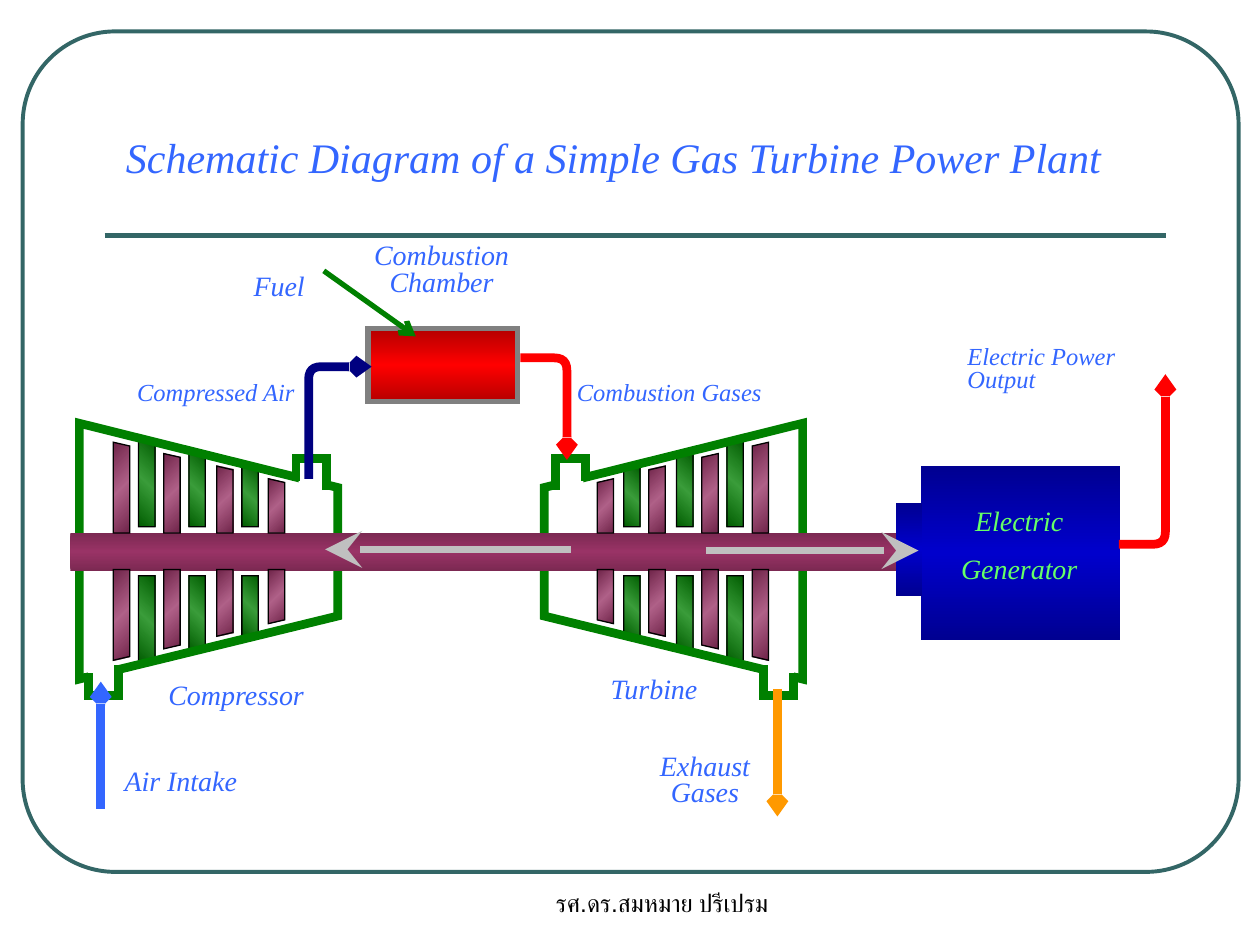
from lxml import etree
from pptx import Presentation, util as u
from pptx.dml.color import RGBColor
from pptx.enum import shapes, text
from pptx.oxml import parse_xml
from pptx.oxml.ns import nsdecls, qn

BLUE, GREEN, RED, PURPLE = "3366FF", "008000", "FF0000", "993366"
TEAL, SILVER, NAVY = "336666", "C0C0C0", "0000CC"

# All positions are in inches.
TITLE = ("Schematic Diagram of a Simple Gas Turbine Power Plant", (0.48, 1.07, 8.78, 0.42))
FOOTER = ("รศ.ดร.สมหมาย ปรีเปรม", (3.67, 7, 3.17, 0.5))

# Turbine parts; the compressor is their mirror image.
MIRROR_X = 7.0      # x + mirrored x
MIRROR_Y = 8.75     # upper y + lower y
BLADE_WIDTH = 0.13
ROTOR_BLADES = [(4.74, 3.8), (5.15, 3.7), (5.57, 3.6), (5.97, 3.51)]    # left, tip
STATOR_BLADES = [(4.95, 3.7), (5.37, 3.59), (5.77, 3.49)]
CASING = [(6.37, 3.36), (4.32, 3.87), (4.32, 4.89), (6.37, 5.39)]
PORTS = [   # opening, then outline
    ((6.08, 5.25, 0.22, 0.28), [(6.06, 5.28), (6.06, 5.52), (6.3, 5.52), (6.3, 5.34)]),
    ((4.41, 3.64, 0.22, 0.28), [(4.41, 3.89), (4.41, 3.64), (4.65, 3.64), (4.65, 3.82)]),
]
SHAFTS = [(3.11, 4.23, 4.1, 0.3), (0.56, 4.23, 2.56, 0.3)]
CHAMBER = (2.92, 2.61, 1.19, 0.58)
GENERATOR = [(7.31, 3.7, 1.58, 1.38), (7.11, 3.99, 0.21, 0.74)]

PIPES = [   # start, corner, end, colour
    ((2.45, 3.8), (2.45, 2.91), (2.95, 2.91), "000080"),
    ((4.13, 2.84), (4.5, 2.84), (4.5, 3.65), RED),
    ((8.88, 4.32), (9.25, 4.32), (9.25, 2.97), RED),
]
ARROWS = [  # from, to, colour, width, head, head size
    ((2.57, 2.15), (3.3, 2.67), GREEN, 3, "arrow", "med"),
    ((0.8, 6.42), (0.8, 5.41), BLUE, 5, "arrow", "sm"),
    ((6.17, 5.47), (6.17, 6.48), "FF9900", 5, "arrow", "sm"),
    ((4.53, 4.36), (2.58, 4.36), SILVER, 4.25, "stealth", "lg"),
    ((5.6, 4.37), (7.29, 4.37), SILVER, 4.25, "stealth", "lg"),
]

SPACED = {"space_before": u.Pt(8), "alignment": text.PP_ALIGN.CENTER}
TIGHT = {"line_spacing": 0.8, "alignment": text.PP_ALIGN.CENTER}
FLOW = {"line_spacing": 0.8, "alignment": text.PP_ALIGN.LEFT}
LABELS = [  # lines, box, size, colour, paragraph format
    (["Turbine"], (4.65, 5.28, 1.08, 0.37), 16, BLUE, SPACED),
    (["Compressor"], (1.16, 5.33, 1.43, 0.37), 16, BLUE, SPACED),
    (["Combustion", "Chamber"], (2.79, 1.89, 1.43, 0.53), 16, BLUE, TIGHT),
    (["Fuel"], (1.82, 2.08, 0.79, 0.37), 16, BLUE, SPACED),
    (["Air Intake"], (0.72, 6.06, 1.43, 0.31), 16, BLUE, TIGHT),
    (["Exhaust Gases"], (4.88, 5.94, 1.43, 0.53), 16, BLUE, TIGHT),
    (["Compressed Air"], (0.99, 2.99, 1.46, 0.29), 14, BLUE, FLOW),
    (["Combustion Gases"], (4.48, 2.99, 1.67, 0.29), 14, BLUE, FLOW),
    (["Electric", "Generator"], (7.47, 3.95, 1.24, 0.77), 16, "66FF66", SPACED),
    (["Electric Power Output"], (7.58, 2.7, 1.96, 0.29), 14, BLUE, FLOW),
]


def emu(*inches):
    return [u.Cm(v * 2.54) for v in inches]


def paint(fmt, colour):
    """Give a fill or a font colour a hex colour."""
    if hasattr(fmt, "solid"):
        fmt.solid()
        fmt = fmt.fore_color
    fmt.rgb = RGBColor.from_string(colour)


def gradient(sp, colour, shade, angle, alpha=100):
    """Fill from a dark edge through the plain colour to a dark edge."""
    edge = f'<a:srgbClr val="{colour}"><a:shade val="{shade * 1000}"/></a:srgbClr>'
    middle = f'<a:srgbClr val="{colour}"><a:alpha val="{alpha * 1000}"/></a:srgbClr>'
    stops = "".join(f'<a:gs pos="{pos}">{c}</a:gs>'
                    for pos, c in ((0, edge), (50000, middle), (100000, edge)))
    sp.fill.background()
    old = sp._element.spPr.find(qn("a:noFill"))
    old.getparent().replace(old, parse_xml(
        f'<a:gradFill {nsdecls("a")} rotWithShape="1"><a:gsLst>{stops}</a:gsLst>'
        f'<a:lin ang="{angle * 60000}" scaled="1"/></a:gradFill>'))


def outline(sp, colour=None, width=1, head=None, size="med"):
    if colour is None:
        sp.line.fill.background()
        return
    paint(sp.line.fill, colour)
    sp.line.width = u.Pt(width)
    ln = sp.line._get_or_add_ln()
    etree.SubElement(ln, qn("a:miter"), lim="800000")
    if head:
        etree.SubElement(ln, qn("a:tailEnd"), type=head, w=size, len=size)


def add_box(box, colour=None, kind=shapes.MSO_SHAPE.RECTANGLE):
    sp = s.shapes.add_shape(kind, *emu(*box))
    sp.shadow.inherit = False
    sp.fill.background()
    if colour:
        paint(sp.fill, colour)
    outline(sp)
    return sp


def add_path(points, close=False):
    pts = [emu(*pt) for pt in points]
    builder = s.shapes.build_freeform(*pts[0])
    builder.add_line_segments(pts[1:], close=close)
    sp = builder.convert_to_shape()
    sp.shadow.inherit = False
    sp.fill.background()
    return sp


def add_line(start, end, *style):
    line = s.shapes.add_connector(shapes.MSO_CONNECTOR.STRAIGHT, *emu(*start, *end))
    outline(line, *style)
    etree.SubElement(line._element.spPr, qn("a:effectLst"))


def rounded(start, corner, end, radius=0.1, steps=6):
    """Points of an elbow whose corner is a quadratic curve."""
    def toward(pt):
        length = abs(pt[0] - corner[0]) + abs(pt[1] - corner[1])
        return [c + (v - c) * radius / length for v, c in zip(pt, corner)]
    a, b = toward(start), toward(end)
    ts = [i / steps for i in range(steps + 1)]
    curve = [[(1 - t) ** 2 * p + 2 * t * (1 - t) * c + t * t * q
              for p, c, q in zip(a, corner, b)] for t in ts]
    return [start, *curve, end]


def write(tf, lines, size, colour, par, font="Times New Roman", italic=True):
    tf.text = "\n".join(lines)
    for p in tf.paragraphs:
        for name, value in par.items():
            setattr(p, name, value)
        r = p.runs[0]
        for name, value in {"name": font, "size": u.Pt(size), "italic": italic}.items():
            setattr(r.font, name, value)
        paint(r.font.color, colour)


def add_label(lines, box, size, colour, par, **style):
    tf = s.shapes.add_textbox(*emu(*box)).text_frame
    tf.word_wrap = par is not FLOW
    write(tf, lines, size, colour, par, **style)


def mirrored(points, flip):
    return [(MIRROR_X - x, y) if flip else (x, y) for x, y in points]


def add_blades(blades, base, colour, angle):
    for flip in (False, True):
        for x, tip in blades:
            right = x + BLADE_WIDTH
            upper = [(x, base), (x, tip + 0.03), (right, tip), (right, base)]
            lower = [(px, MIRROR_Y - py) for px, py in upper]
            for points in (upper, lower):
                sp = add_path(mirrored(points, flip), close=True)
                gradient(sp, colour, 46, angle, 77)
                outline(sp, "000000", 0.75)


def add_casing(flip):
    outline(add_path(mirrored(CASING, flip), close=True), GREEN, 5)
    for (x, y, w, h), rim in PORTS:
        add_box((MIRROR_X - x - w if flip else x, y, w, h), "FFFFFF")
        outline(add_path(mirrored(rim, flip)), GREEN, 5)


prs = Presentation()
prs.slide_width, prs.slide_height = emu(10, 7.5)
s = prs.slides.add_slide(prs.slide_layouts[5])

frame = add_box((0.18, 0.25, 9.65, 6.67), kind=shapes.MSO_SHAPE.ROUNDED_RECTANGLE)
frame.adjustments[0] = 0.11
outline(frame, TEAL, 2.25)
add_line((0.83, 1.87), (9.25, 1.87), TEAL, 3)

title = s.shapes.title
title.left, title.top, title.width, title.height = emu(*TITLE[1])
tf = title.text_frame
for name, value in {"word_wrap": True, "auto_size": text.MSO_AUTO_SIZE.NONE,
                    "vertical_anchor": text.MSO_ANCHOR.TOP}.items():
    setattr(tf, name, value)
write(tf, [TITLE[0]], 24, BLUE, TIGHT)
add_label([FOOTER[0]], FOOTER[1], 14, "000000", {"alignment": text.PP_ALIGN.CENTER},
          font="Arial", italic=False)

add_blades(STATOR_BLADES, 4.18, GREEN, 315)
for flip in (False, True):
    add_casing(flip)
for box in SHAFTS:
    gradient(add_box(box), PURPLE, 62, 90)
add_blades(ROTOR_BLADES, 4.23, PURPLE, 45)

chamber = add_box(CHAMBER)
gradient(chamber, RED, 46, 90)
outline(chamber, "808080", 3)
for box in GENERATOR:
    gradient(add_box(box), NAVY, 46, 90)

for start, corner, end, colour in PIPES:
    outline(add_path(rounded(start, corner, end)), colour, 5, "arrow", "sm")
for arrow in ARROWS:
    add_line(*arrow)
for label in LABELS:
    add_label(*label)

prs.save("out.pptx")
